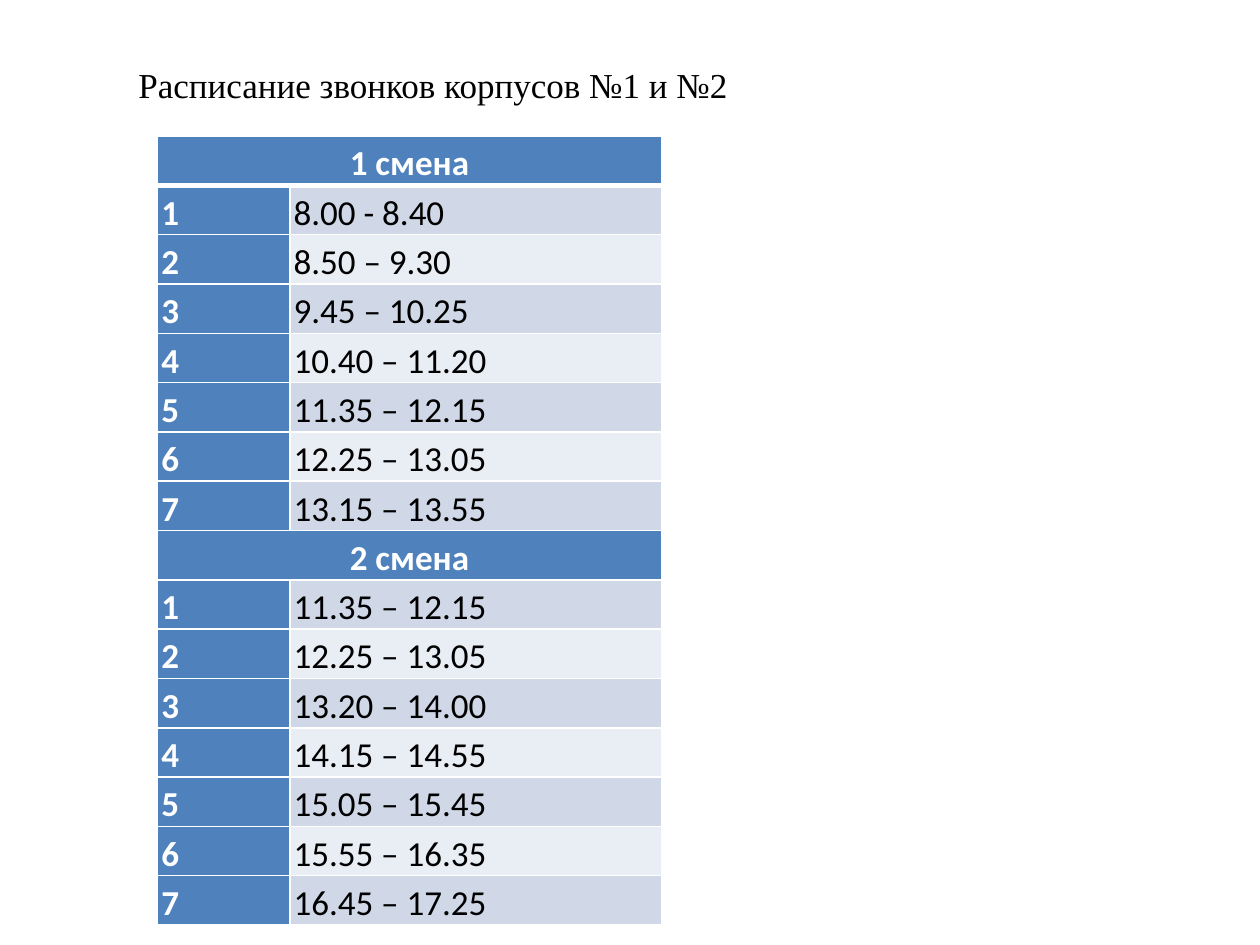
"""Build a slide with the bell schedule of two school shifts."""
import lxml.etree
import pptx
import pptx.dml.color
import pptx.enum.text
import pptx.oxml.ns
import pptx.util

COLORS = {"header": "4F81BD", "odd": "D0D8E8", "even": "E9EDF4", "white": "FFFFFF", "black": "000000"}
SHIFTS = {
    "1 смена": ["8.00 - 8.40", "8.50 – 9.30", "9.45 – 10.25", "10.40 – 11.20",
                "11.35 – 12.15", "12.25 – 13.05", "13.15 – 13.55"],
    "2 смена": ["11.35 – 12.15", "12.25 – 13.05", "13.20 – 14.00", "14.15 – 14.55",
                "15.05 – 15.45", "15.55 – 16.35", "16.45 – 17.25"],
}
COLUMN_WIDTHS = [1.05, 2.95]
ROW_HEIGHT = 0.32


def color(name):
    return pptx.dml.color.RGBColor.from_string(COLORS[name])


def style_cell(cell, text, fill, ink, bold, top, bottom):
    cell.margin_left = cell.margin_right = pptx.util.Inches(0.03)
    cell.margin_top = cell.margin_bottom = 0
    properties = cell._tc.get_or_add_tcPr()
    for side, points in {"L": 1, "R": 1, "T": top, "B": bottom}.items():
        line = lxml.etree.SubElement(properties, pptx.oxml.ns.qn(f"a:ln{side}"), w=str(pptx.util.Pt(points)))
        solid = lxml.etree.SubElement(line, pptx.oxml.ns.qn("a:solidFill"))
        lxml.etree.SubElement(solid, pptx.oxml.ns.qn("a:srgbClr"), val=COLORS["white"])
    cell.fill.solid()
    cell.fill.fore_color.rgb = color(fill)
    cell.text = text
    para = cell.text_frame.paragraphs[0]
    para.line_spacing = 1.15
    para.font.name = "Calibri"
    para.font.size = pptx.util.Pt(20)
    para.font.bold = bold
    para.font.color.rgb = color(ink)
    return para


deck = pptx.Presentation()
deck.slide_width = pptx.util.Inches(10)
deck.slide_height = pptx.util.Inches(7.5)
page = deck.slides.add_slide(deck.slide_layouts[6])

rows = []
for shift, lessons in SHIFTS.items():
    rows.append((shift, ""))
    rows.extend((str(number), hours) for number, hours in enumerate(lessons, 1))

frame = page.shapes.add_table(
    len(rows), len(COLUMN_WIDTHS), pptx.util.Inches(1.25), pptx.util.Inches(1.08),
    pptx.util.Inches(sum(COLUMN_WIDTHS)), pptx.util.Inches(ROW_HEIGHT * len(rows)))
table = frame.table
table.horz_banding = False
for column, width in zip(table.columns, COLUMN_WIDTHS):
    column.width = pptx.util.Inches(width)

for index, (label, hours) in enumerate(rows):
    table.rows[index].height = pptx.util.Inches(ROW_HEIGHT)
    left, right = table.cell(index, 0), table.cell(index, 1)
    top = 3 if index == 1 else 1
    bottom = 3 if index == 0 else 1
    para = style_cell(left, label, "header", "white", True, top, bottom)
    if hours:
        band = "odd" if int(label) % 2 else "even"
        style_cell(right, hours, band, "black", False, top, bottom)
    else:
        style_cell(right, "", "header", "white", True, top, bottom)
        left.merge(right)
        para.alignment = pptx.enum.text.PP_ALIGN.CENTER
frame.height = pptx.util.Inches(6.13)

title = page.shapes.add_textbox(
    pptx.util.Inches(1), pptx.util.Inches(0.45), pptx.util.Inches(4.93), pptx.util.Inches(0.44))
title.text_frame.word_wrap = False
title.text_frame.auto_size = pptx.enum.text.MSO_AUTO_SIZE.SHAPE_TO_FIT_TEXT
title.text_frame.vertical_anchor = pptx.enum.text.MSO_ANCHOR.MIDDLE
title.text_frame.text = "Расписание звонков корпусов №1 и №2"
heading = title.text_frame.paragraphs[0]
heading.font.name = "Times New Roman"
heading.font.size = pptx.util.Pt(20)
heading.font.color.rgb = color("black")

deck.save("out.pptx")
